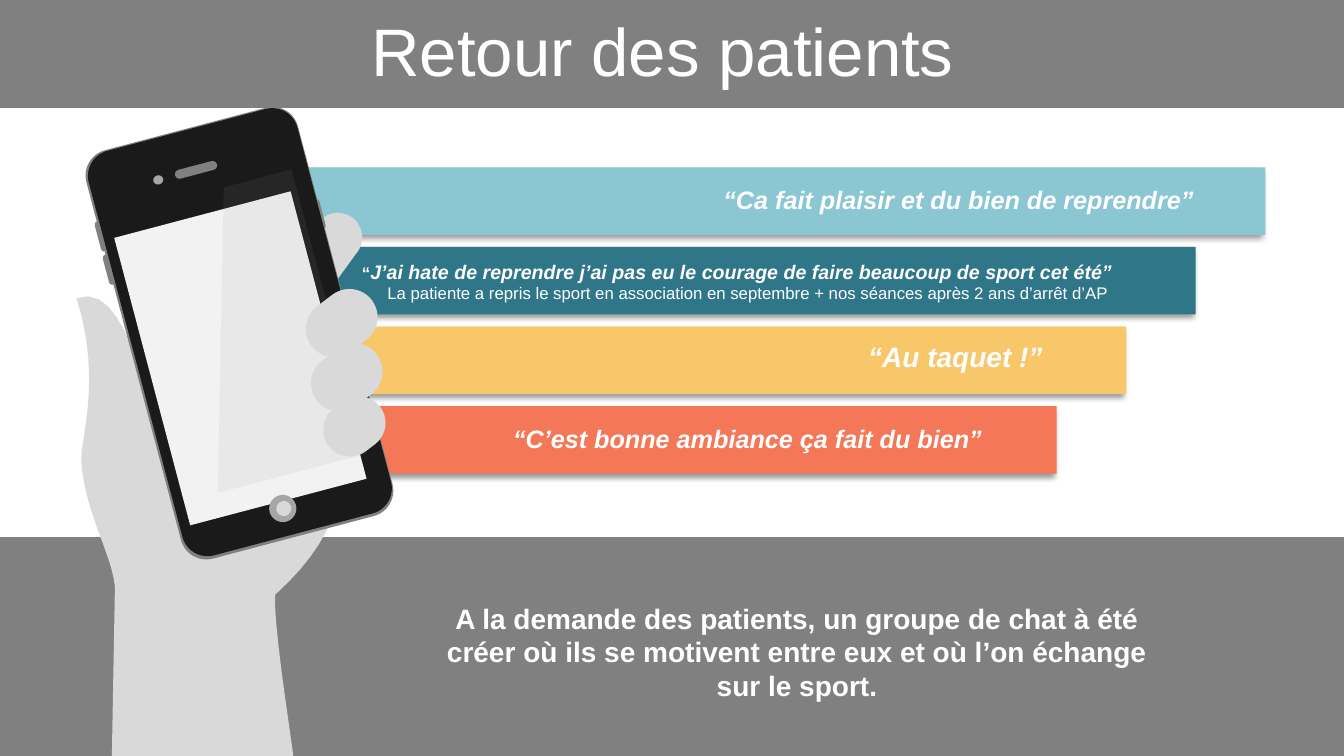
from lxml import etree
from pptx import Presentation
from pptx.dml.color import RGBColor
from pptx.enum import shapes, text
from pptx.oxml import ns

PX = 9144
PAGE = (1333, 750)
TILT = 345.2
STEPS = 12
COLORS = {
    "band": "808080", "white": "FFFFFF", "skin": "D9D9D9", "body": "1A1A1A",
    "screen": "F2F2F2", "glare": "999999", "button": "A6A6A6", "shadow": "000000",
    "sky": "8AC7D3", "teal": "307689", "sand": "F7C76A", "coral": "F47758",
}
TITLE = "Retour des patients "
BARS = ["sky", "teal", "sand", "coral"]
QUOTES = [
    ((655, 178, 539, 40), [("“Ca fait plaisir et du bien de reprendre”", 18, True, True)]),
    ((335, 276, 779, 30), [("La patiente a repris le sport en association en septembre + "
                            "nos séances après 2 ans d’arrêt d’AP ", 12, False, False)]),
    ((335, 253, 779, 34), [("“", 12, True, False),
                           ("J’ai hate de reprendre j’ai pas eu le courage de faire "
                            "beaucoup de sport cet été”", 14, True, True)]),
    ((505, 332, 539, 44), [("“Au taquet !”", 20, True, True)]),
    ((445, 415, 539, 40), [("“C’est bonne ambiance ça fait du bien”", 18, True, True)]),
]
MESSAGE = ((412, 591, 757, 111), [(
    "A la demande des patients, un groupe de chat à été créer où ils se motivent "
    "entre eux et où l’on échange sur le sport.", 20, True, False)])

HAND = [
    (333, 211), (339, 211, 346, 213, 351, 217), (361, 226, 362, 242, 353, 252),
    (279, 354), (314, 375, 365, 388, 358, 422), (335, 502, 332, 536, 273, 590),
    (271, 618, 287, 720, 291, 750), (111, 750), (114, 582),
    (111, 550, 85, 510, 81, 461), (77, 442, 103, 381, 76, 296),
    (124, 277, 145, 396, 155, 424), (316, 220), (320, 215, 327, 212, 333, 211),
]
GLARE = [(222, 186), (289, 168), (364, 450), (216, 489)]
RECT = shapes.MSO_SHAPE.RECTANGLE
ROUND = shapes.MSO_SHAPE.ROUNDED_RECTANGLE
OVAL = shapes.MSO_SHAPE.OVAL
PHONE = [
    (ROUND, (97, 219, 7, 31), "band", 0.5),
    (ROUND, (105, 252, 7, 31), "band", 0.5),
    (ROUND, (313, 197, 7, 31), "band", 0.5),
    (ROUND, (129, 121, 217, 419), "band", 0.12),
    (ROUND, (131, 122, 214, 415), "body", 0.12),
    (RECT, (148, 208, 181, 295), "screen", None),
    (OVAL, (267, 491, 27, 27), "button", None),
    (OVAL, (274, 497, 15, 15), "skin", None),
    (ROUND, (173, 164, 43, 9), "band", 0.5),
    (OVAL, (152, 174, 10, 9), "button", None),
]
FINGERS = [(311, 283, 56, 75), (316, 337, 56, 75), (325, 391, 53, 64)]


def emu(lengths):
    return [length * PX for length in lengths]


def color(name):
    return RGBColor.from_string(COLORS[name])


def paint(shape, name):
    shape.fill.solid()
    shape.fill.fore_color.rgb = color(name)
    shape.line.fill.background()
    shape.shadow.inherit = False
    return shape


def add_piece(page, kind, box, name, turn=0, corner=None):
    shape = paint(page.shapes.add_shape(kind, *emu(box)), name)
    shape.rotation = turn
    if corner is not None:
        shape.adjustments[0] = corner
    return shape


def add_outline(page, segments, name):
    points = [segments[0]]
    for segment in segments[1:]:
        if len(segment) == 2:
            points.append(segment)
            continue
        ax, ay = points[-1]
        bx, by, cx, cy, dx, dy = segment
        for step in range(1, STEPS + 1):
            t = step / STEPS
            weights = ((1 - t) ** 3, 3 * t * (1 - t) ** 2, 3 * t * t * (1 - t), t ** 3)
            points.append((sum(w * x for w, x in zip(weights, (ax, bx, cx, dx))),
                           sum(w * y for w, y in zip(weights, (ay, by, cy, dy)))))
    points = [(round(x * PX), round(y * PX)) for x, y in points]
    builder = page.shapes.build_freeform(*points[0])
    builder.add_line_segments(points[1:], close=True)
    return paint(builder.convert_to_shape(), name)


def add_alpha(parent, percent):
    etree.SubElement(parent, ns.qn("a:alpha"), val=str(percent * 1000))


def add_shadow(shape):
    effects = shape.element.spPr.find(ns.qn("a:effectLst"))
    shadow = etree.SubElement(effects, ns.qn("a:outerShdw"), blurRad="50800",
                              dist="38100", dir="8100000", rotWithShape="0")
    add_alpha(etree.SubElement(shadow, ns.qn("a:srgbClr"), val=COLORS["shadow"]), 40)


def add_text(page, box, spans, align, anchor):
    frame = page.shapes.add_textbox(*emu(box)).text_frame
    frame.word_wrap = True
    frame.vertical_anchor = anchor
    para = frame.paragraphs[0]
    para.alignment = align
    para.font.name = "Arial"
    para.font.color.rgb = color("white")
    for words, size, bold, italic in spans:
        span = para.add_run()
        span.text = words
        span.font.name = "Arial"
        span.font.size = size * 12700
        span.font.bold = bold
        span.font.italic = italic
        span.font.color.rgb = color("white")


def add_title(page):
    title = page.shapes.title
    title.left, title.top, title.width, title.height = emu((0, 15, 1333, 78))
    page.shapes._spTree.append(title.element)
    title.text_frame.text = TITLE
    title.text_frame.vertical_anchor = text.MSO_ANCHOR.MIDDLE
    para = title.text_frame.paragraphs[0]
    para.alignment = text.PP_ALIGN.CENTER
    para.line_spacing = 0.9
    para.font.name = "Arial"
    para.font.size = 48 * 12700
    para.font.color.rgb = color("white")


def main():
    deck = Presentation()
    deck.slide_width, deck.slide_height = emu(PAGE)
    page = deck.slides.add_slide(deck.slide_layouts[5])
    for box in ((0, 533, 1333, 217), (0, 0, 1333, 107)):
        add_piece(page, RECT, box, "band")
    for row, name in enumerate(BARS):
        add_shadow(add_piece(page, RECT, (306, 166 + 79 * row, 949 - 69 * row, 67), name))
    add_outline(page, HAND, "skin")
    for kind, box, name, corner in PHONE:
        add_piece(page, kind, box, name, TILT, corner)
    glare = add_outline(page, GLARE, "glare")
    add_alpha(glare.element.spPr.find(ns.qn("a:solidFill"))[0], 10)
    add_title(page)
    for box, spans in QUOTES:
        add_text(page, box, spans, text.PP_ALIGN.RIGHT, text.MSO_ANCHOR.TOP)
    for box in FINGERS:
        add_piece(page, ROUND, box, "skin", 52.5, 0.5)
    add_text(page, *MESSAGE, text.PP_ALIGN.CENTER, text.MSO_ANCHOR.MIDDLE)
    deck.save("out.pptx")


if __name__ == "__main__":
    main()
